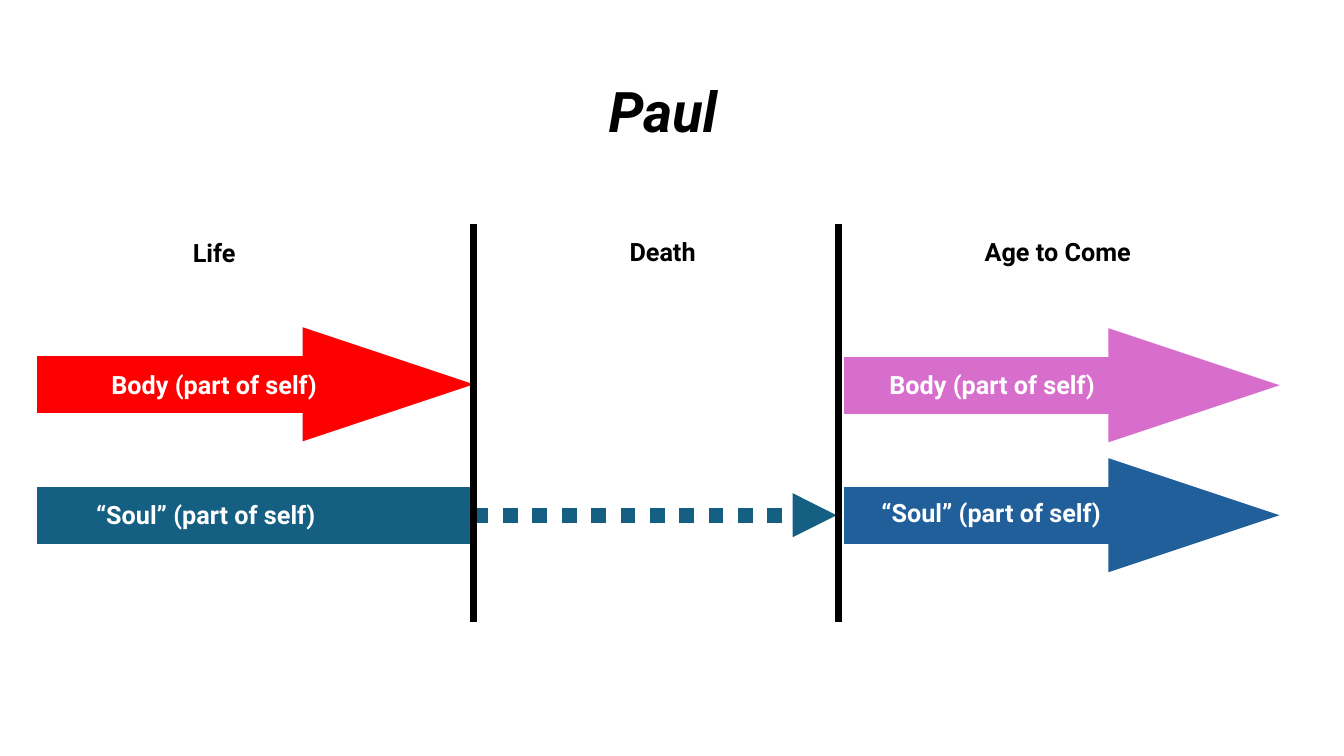
"""Build the slide on Paul's view of body and soul through life, death and the age to come."""
from lxml.etree import SubElement
from pptx import Presentation
from pptx.dml.color import RGBColor
from pptx.enum.dml import MSO_LINE
from pptx.enum.shapes import MSO_CONNECTOR
from pptx.enum.text import MSO_ANCHOR, MSO_AUTO_SIZE, PP_ALIGN
from pptx.oxml.ns import qn
from pptx.util import Pt

BLACK = RGBColor(0x00, 0x00, 0x00)
WHITE = RGBColor(0xFF, 0xFF, 0xFF)
RED = RGBColor(0xFF, 0x00, 0x00)
TEAL = RGBColor(0x15, 0x60, 0x82)
PINK = RGBColor(0xD8, 0x6E, 0xCC)
BLUE = RGBColor(0x21, 0x5F, 0x9A)

BAR, DOTS, DIVIDER = 40.75, 10.5, 5.25
LIFE_X, DEATH_X, AGE_X, END_X = 26.6, 338.4, 602.6, 914
BODY_Y, SOUL_Y = 274.5, 368
TOP, BOTTOM = 160, 444


def add_line(x1, y1, x2, y2, color, width, head=None, dash=None):
    c = s.shapes.add_connector(MSO_CONNECTOR.STRAIGHT, Pt(x1), Pt(y1), Pt(x2), Pt(y2))
    c.line.color.rgb = color
    c.line.width = Pt(width)
    if dash:
        c.line.dash_style = dash
    props = c._element.spPr
    if head:
        SubElement(props.find(qn("a:ln")), qn("a:tailEnd"), type="triangle", w=head, len="med")
    SubElement(props, qn("a:effectLst"))


def set_text(sp, text, size, color, italic=False):
    tf = sp.text_frame
    tf.word_wrap = True
    tf.auto_size = MSO_AUTO_SIZE.NONE
    tf.vertical_anchor = MSO_ANCHOR.TOP
    p = tf.paragraphs[0]
    p.alignment = PP_ALIGN.CENTER
    r = p.add_run()
    r.text = text
    font = {"name": "Roboto", "size": Pt(size), "bold": True, "italic": italic}
    for key, value in font.items():
        setattr(r.font, key, value)
    r.font.color.rgb = color


prs = Presentation()
prs.slide_width, prs.slide_height = Pt(960), Pt(540)
s = prs.slides.add_slide(prs.slide_layouts[5])

title = s.shapes.title
title.left, title.top, title.width, title.height = Pt(195), Pt(51), Pt(557), Pt(55.5)
set_text(title, "Paul", 40, BLACK, italic=True)

for x1, x2, y, color, head in [
    (LIFE_X, DEATH_X, BODY_Y, RED, "sm"),
    (LIFE_X, DEATH_X, SOUL_Y, TEAL, None),
    (AGE_X, END_X, BODY_Y + 0.7, PINK, "sm"),
    (AGE_X, END_X, SOUL_Y, BLUE, "sm"),
]:
    add_line(x1, y, x2, y, color, BAR, head)

add_line(DEATH_X, SOUL_Y, 597.6, SOUL_Y, TEAL, DOTS, "med", MSO_LINE.ROUND_DOT)

for x in (DEATH_X, 599):
    add_line(x, TOP, x, BOTTOM, BLACK, DIVIDER)

for text, x, y, color in [
    ("Life", 39, 166.3, BLACK),
    ("Death", 359.3, 165, BLACK),
    ("Age to Come", 641.5, 165, BLACK),
    ("Body (part of self)", 39, 260, WHITE),
    ("“Soul” (part of self)", 33, 353, WHITE),
    ("Body (part of self)", 594.7, 260, WHITE),
    ("“Soul” (part of self)", 594, 352, WHITE),
]:
    label = s.shapes.add_textbox(Pt(x), Pt(y), Pt(228), Pt(29))
    set_text(label, text, 18, color)

prs.save("out.pptx")
